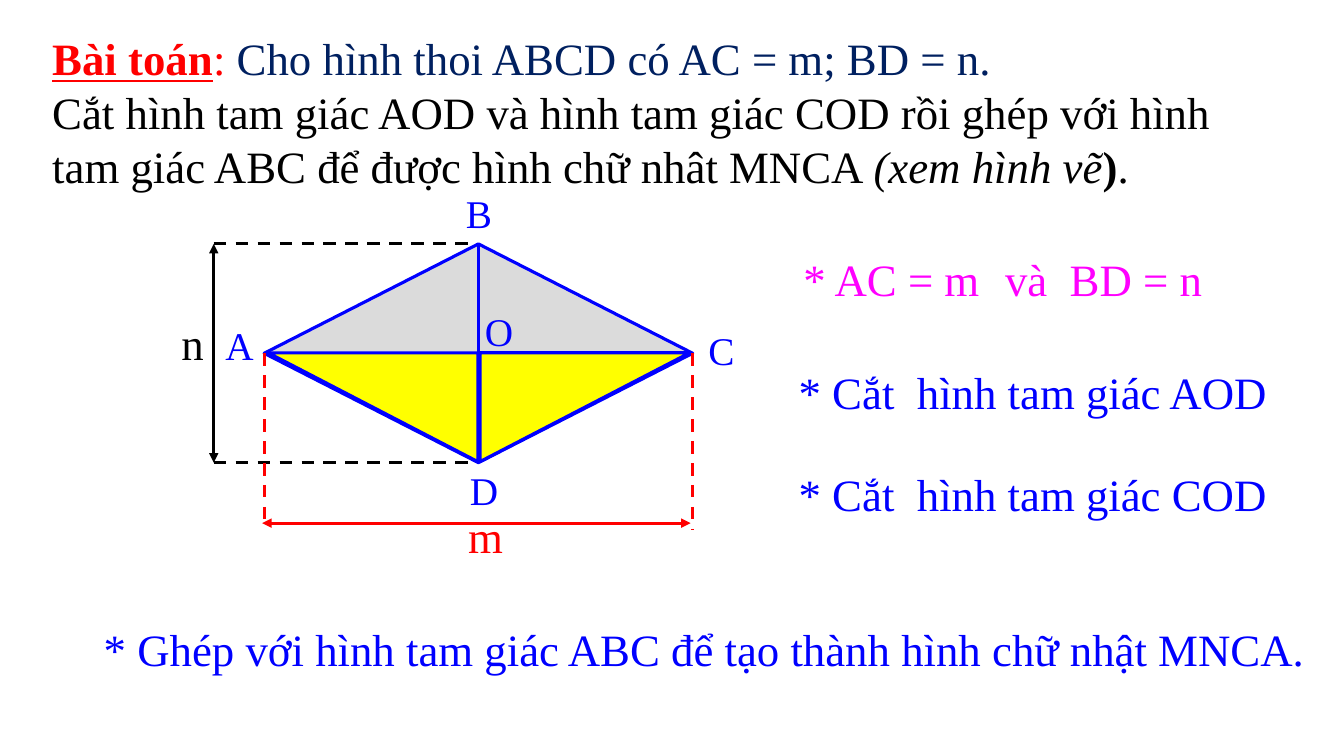
from pptx import Presentation
from pptx.dml.color import RGBColor
from pptx.enum.dml import MSO_LINE
from pptx.enum.shapes import MSO_CONNECTOR, MSO_SHAPE
from pptx.enum.text import MSO_AUTO_SIZE, PP_ALIGN
from pptx.oxml.ns import qn
from pptx.util import Inches, Pt
from lxml.etree import SubElement

COLORS = {"blue": "0000FF", "red": "FF0000", "black": "000000", "pink": "FF00FF",
          "navy": "002060", "grey": "DBDBDB", "yellow": "FFFF00"}


def rgb(name):
    return RGBColor.from_string(COLORS[name])


class Board:
    """Draws on one slide in the lesson's style."""
    font = "Times New Roman"
    line_width = Pt(2.25)

    def __init__(self, slide):
        self.s = slide

    def text(self, x, y, w, h, paragraphs, size=32, align=PP_ALIGN.LEFT):
        """Each paragraph is a list of (text, colour, font attributes)."""
        tf = self.s.shapes.add_textbox(*map(Inches, (x, y, w, h))).text_frame
        tf.word_wrap = True
        tf.auto_size = MSO_AUTO_SIZE.SHAPE_TO_FIT_TEXT
        for i, runs in enumerate(paragraphs):
            p = tf.add_paragraph() if i else tf.paragraphs[0]
            p.alignment = align
            for words, color, extra in runs:
                r = p.add_run()
                r.text = words
                style = {"name": self.font, "size": Pt(size), **extra}
                for key, value in style.items():
                    setattr(r.font, key, value)
                r.font.color.rgb = rgb(color)

    def label(self, x, y, w, h, words, color="blue", **style):
        self.text(x, y, w, h, [[(words, color, {})]], **style)

    def shape(self, kind, x, y, w, h, fill, rotation=0):
        sp = self.s.shapes.add_shape(kind, *map(Inches, (x, y, w, h)))
        sp.shadow.inherit = False
        sp.rotation = rotation
        sp.fill.solid()
        sp.fill.fore_color.rgb = rgb(fill)
        sp.line.color.rgb = rgb("blue")
        sp.line.width = self.line_width
        return sp

    def line(self, x1, y1, x2, y2, color, dashed=False, arrows=False):
        ln = self.s.shapes.add_connector(
            MSO_CONNECTOR.STRAIGHT, *map(Inches, (x1, y1, x2, y2)))
        ln.line.color.rgb = rgb(color)
        ln.line.width = self.line_width
        if dashed:
            ln.line.dash_style = MSO_LINE.DASH
        if arrows:
            for end in ("a:headEnd", "a:tailEnd"):
                SubElement(ln.line._get_or_add_ln(), qn(end), type="triangle")
        SubElement(ln._element.spPr, qn("a:effectLst"))
        return ln


def draw_rhombus(board):
    left, top, width, height = 2.62, 2.42, 4.25, 2.17
    right, bottom = left + width, top + height
    mid_x, mid_y = left + width / 2, top + height / 2
    rhombus = board.shape(MSO_SHAPE.DIAMOND, left, top, width, height, "grey")
    for start, end in ((0, 2), (1, 3)):
        diagonal = board.line(mid_x, top, mid_x, bottom, "blue")
        diagonal.begin_connect(rhombus, start)
        diagonal.end_connect(rhombus, end)

    for y in (top, bottom):
        board.line(2.12, y, 4.69, y, "black", dashed=True)
    board.line(2.12, top, 2.12, bottom, "black", arrows=True)
    for x, end in ((left, 5.19), (right, 5.25)):
        board.line(x, mid_y, x, end, "red", dashed=True)
    board.line(2.6, 5.19, 6.85, 5.19, "red", arrows=True)

    for x, flipped in ((5.26, False), (3.16, True)):
        half = board.shape(MSO_SHAPE.RIGHT_TRIANGLE, x, 3, 1.08, 2.08, "yellow", 90)
        if flipped:
            half._element.spPr.find(qn("a:xfrm")).set("flipV", "1")

    for name, x, y, w in (("A", 2.07, 3.14, 0.61), ("B", 4.37, 1.83, 0.76),
                          ("C", 6.89, 3.19, 0.53), ("D", 4.46, 4.58, 0.68)):
        board.label(x, y, w, 0.57, name, size=28, align=PP_ALIGN.CENTER)
    board.label(4.71, 3, 0.53, 0.57, "O", size=28)
    board.label(4.21, 5, 1.21, 0.63, "m", "red", align=PP_ALIGN.CENTER)
    board.label(1.53, 3.08, 0.76, 0.63, "n", "black", align=PP_ALIGN.CENTER)


def write_steps(board):
    board.label(7.87, 2.45, 2.08, 0.63, "* AC = m", "pink")
    board.label(9.87, 2.45, 2.33, 0.63, "và  BD = n", "pink")
    for y, name in ((3.57, "AOD"), (4.58, "COD")):
        board.label(7.76, y, 4.97, 0.64, f"* Cắt  hình tam giác {name}",
                    align=PP_ALIGN.CENTER)
    board.label(0.93, 6.12, 12.19, 0.64,
                "* Ghép với hình tam giác ABC để tạo thành hình chữ nhật MNCA.")


def write_problem(board):
    board.text(0.42, 0.26, 12.43, 1.72, [
        [("Bài toán", "red", {"bold": True, "underline": True}),
         (": ", "red", {}),
         ("Cho hình thoi ABCD có AC = m; BD = n.", "navy", {})],
        [("Cắt hình tam giác AOD và hình tam giác COD rồi ghép với hình "
          "tam giác ABC để được hình chữ nhât MNCA ", "black", {}),
         ("(xem hình vẽ", "black", {"italic": True}),
         (")", "black", {"bold": True}),
         (".", "black", {})],
    ])


def main():
    prs = Presentation()
    prs.slide_width, prs.slide_height = Inches(13.33), Inches(7.5)
    board = Board(prs.slides.add_slide(prs.slide_layouts[6]))
    draw_rhombus(board)
    write_steps(board)
    write_problem(board)
    prs.save("out.pptx")


if __name__ == "__main__":
    main()
